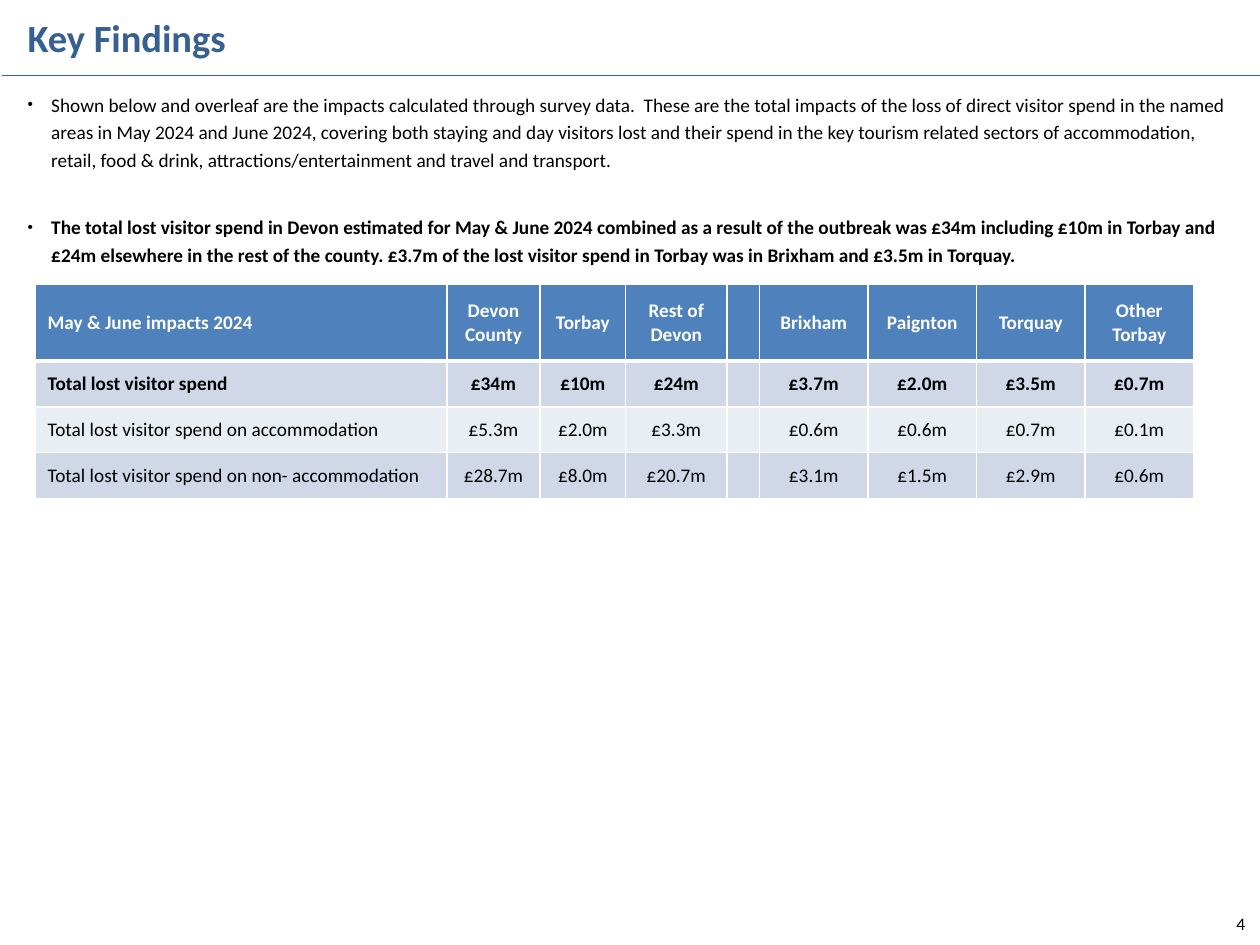
from dataclasses import dataclass

from lxml.etree import SubElement
from pptx import Presentation
from pptx.dml.color import RGBColor
from pptx.enum.shapes import MSO_CONNECTOR
from pptx.enum.text import MSO_ANCHOR, MSO_AUTO_SIZE, PP_ALIGN
from pptx.oxml.ns import qn
from pptx.util import Pt

FONT = "Calibri"
TEXT_SIZE = 11
COLORS = {
    "title": "376092",
    "text": "000000",
    "white": "FFFFFF",
    "header": "4F81BD",
    "band_dark": "D0D8E8",
    "band_light": "E9EDF4",
}


@dataclass(frozen=True)
class Box:
    left: float
    top: float
    width: float
    height: float


@dataclass(frozen=True)
class Bullet:
    text: str
    space_before: float
    bold: bool = False


@dataclass(frozen=True)
class Row:
    values: tuple[str, ...]
    height: float
    fill: str
    color: str = "text"
    bold: bool = False
    rule_below: float = 1


BULLETS = (
    Bullet(
        "Shown below and overleaf are the impacts calculated through survey data.  "
        "These are the total impacts of the loss of direct visitor spend in the named "
        "areas in May 2024 and June 2024, covering both staying and day visitors lost "
        "and their spend in the key tourism related sectors of accommodation, retail, "
        "food & drink, attractions/entertainment and travel and transport.",
        3.4,
    ),
    Bullet(
        "The total lost visitor spend in Devon estimated for May & June 2024 combined "
        "as a result of the outbreak was £34m including £10m in Torbay and £24m "
        "elsewhere in the rest of the county. £3.7m of the lost visitor spend in "
        "Torbay was in Brixham and £3.5m in Torquay.",
        22.6,
        bold=True,
    ),
)
COLUMN_WIDTHS = (235.4, 53.2, 49, 57.8, 18.7) + (62,) * 4
ROWS = (
    Row(("May & June impacts 2024", "Devon County", "Torbay", "Rest of Devon", "",
         "Brixham", "Paignton", "Torquay", "Other Torbay"),
        43.9, "header", "white", bold=True, rule_below=3),
    Row(("Total lost visitor spend", "£34m", "£10m", "£24m", "",
         "£3.7m", "£2.0m", "£3.5m", "£0.7m"), 26.2, "band_dark", bold=True),
    Row(("Total lost visitor spend on accommodation", "£5.3m", "£2.0m", "£3.3m", "",
         "£0.6m", "£0.6m", "£0.7m", "£0.1m"), 26.2, "band_light"),
    Row(("Total lost visitor spend on non- accommodation", "£28.7m", "£8.0m", "£20.7m", "",
         "£3.1m", "£1.5m", "£2.9m", "£0.6m"), 26.2, "band_dark"),
)


def rgb(name: str) -> RGBColor:
    return RGBColor.from_string(COLORS[name])


def add_run(paragraph, text: str, size: float, color: str = "text", bold: bool = False) -> None:
    run = paragraph.add_run()
    run.text = text
    run.font.name = FONT
    run.font.size = Pt(size)
    run.font.bold = bold
    run.font.color.rgb = rgb(color)


def place(shape, box: Box) -> None:
    shape.left, shape.top = Pt(box.left), Pt(box.top)
    shape.width, shape.height = Pt(box.width), Pt(box.height)


def add_title(slide, text: str) -> None:
    title = slide.shapes.title
    place(title, Box(8.6, -0.7, 129, 37.4))
    frame = title.text_frame
    frame.word_wrap = False
    frame.auto_size = MSO_AUTO_SIZE.NONE
    frame.vertical_anchor = MSO_ANCHOR.TOP
    paragraph = frame.paragraphs[0]
    paragraph.alignment = PP_ALIGN.LEFT
    paragraph.line_spacing = 1.2
    add_run(paragraph, text, 22, "title", bold=True)


def add_rule(slide) -> None:
    rule = slide.shapes.add_connector(
        MSO_CONNECTOR.STRAIGHT, Pt(1.4), Pt(43.2), Pt(721.4), Pt(43.2))
    rule.line.color.rgb = rgb("title")
    rule.line.width = Pt(0.75)
    SubElement(rule._element.spPr, qn("a:effectLst"))


def add_bullets(slide, bullets: tuple[Bullet, ...]) -> None:
    body = slide.placeholders[1]
    place(body, Box(8.6, 46.8, 706.4, 165.6))
    frame = body.text_frame
    frame.auto_size = MSO_AUTO_SIZE.NONE
    for index, bullet in enumerate(bullets):
        paragraph = frame.add_paragraph() if index else frame.paragraphs[0]
        paragraph.line_spacing = 1.2
        paragraph.space_before = Pt(bullet.space_before)
        properties = paragraph._p.get_or_add_pPr()
        properties.set("marL", str(Pt(13.5)))
        properties.set("indent", str(Pt(-13.5)))
        SubElement(properties, qn("a:buSzPct"), val="80000")
        SubElement(properties, qn("a:buFont"), typeface="Arial")
        SubElement(properties, qn("a:buChar"), char="•")
        add_run(paragraph, bullet.text, TEXT_SIZE, bold=bullet.bold)


def add_borders(cell, above: float, below: float) -> None:
    properties = cell._tc.get_or_add_tcPr()
    widths = {"lnL": 1, "lnR": 1, "lnT": above, "lnB": below}
    for position, (tag, width) in enumerate(widths.items()):
        line = SubElement(properties, qn(f"a:{tag}"), w=str(Pt(width)))
        fill = SubElement(line, qn("a:solidFill"))
        SubElement(fill, qn("a:srgbClr"), val=COLORS["white"])
        properties.insert(position, line)  # borders precede the cell fill


def fill_cell(cell, text: str, row: Row, centred: bool) -> None:
    cell.fill.solid()
    cell.fill.fore_color.rgb = rgb(row.fill)
    cell.vertical_anchor = MSO_ANCHOR.MIDDLE
    paragraph = cell.text_frame.paragraphs[0]
    paragraph.alignment = PP_ALIGN.CENTER if centred else PP_ALIGN.LEFT
    if text:
        add_run(paragraph, text, TEXT_SIZE, row.color, row.bold)
    else:
        # Keeps the default 18 pt from stretching the row
        SubElement(paragraph._p, qn("a:endParaRPr"), sz=str(TEXT_SIZE * 100))


def add_impact_table(slide, rows: tuple[Row, ...]) -> None:
    table = slide.shapes.add_table(
        len(rows), len(COLUMN_WIDTHS), Pt(20), Pt(162.4),
        Pt(sum(COLUMN_WIDTHS)), Pt(sum(row.height for row in rows))).table
    for column, width in zip(table.columns, COLUMN_WIDTHS):
        column.width = Pt(width)
    rule_above = 1
    for row_index, row in enumerate(rows):
        table.rows[row_index].height = Pt(row.height)
        for column_index, text in enumerate(row.values):
            cell = table.cell(row_index, column_index)
            fill_cell(cell, text, row, centred=column_index > 0)
            add_borders(cell, rule_above, row.rule_below)
        rule_above = row.rule_below


def add_page_number(slide, number: str) -> None:
    frame = slide.shapes.add_textbox(Pt(550.8), Pt(513.4), Pt(167.8), Pt(28.8)).text_frame
    frame.word_wrap = True
    frame.vertical_anchor = MSO_ANCHOR.MIDDLE
    paragraph = frame.paragraphs[0]
    paragraph.alignment = PP_ALIGN.RIGHT
    add_run(paragraph, number, 10)


def main() -> None:
    presentation = Presentation()
    presentation.slide_width, presentation.slide_height = Pt(720), Pt(540)
    slide = presentation.slides.add_slide(presentation.slide_layouts[1])
    add_bullets(slide, BULLETS)
    add_rule(slide)
    add_title(slide, "Key Findings")
    add_page_number(slide, "4")
    add_impact_table(slide, ROWS)
    presentation.save("out.pptx")


if __name__ == "__main__":
    main()
